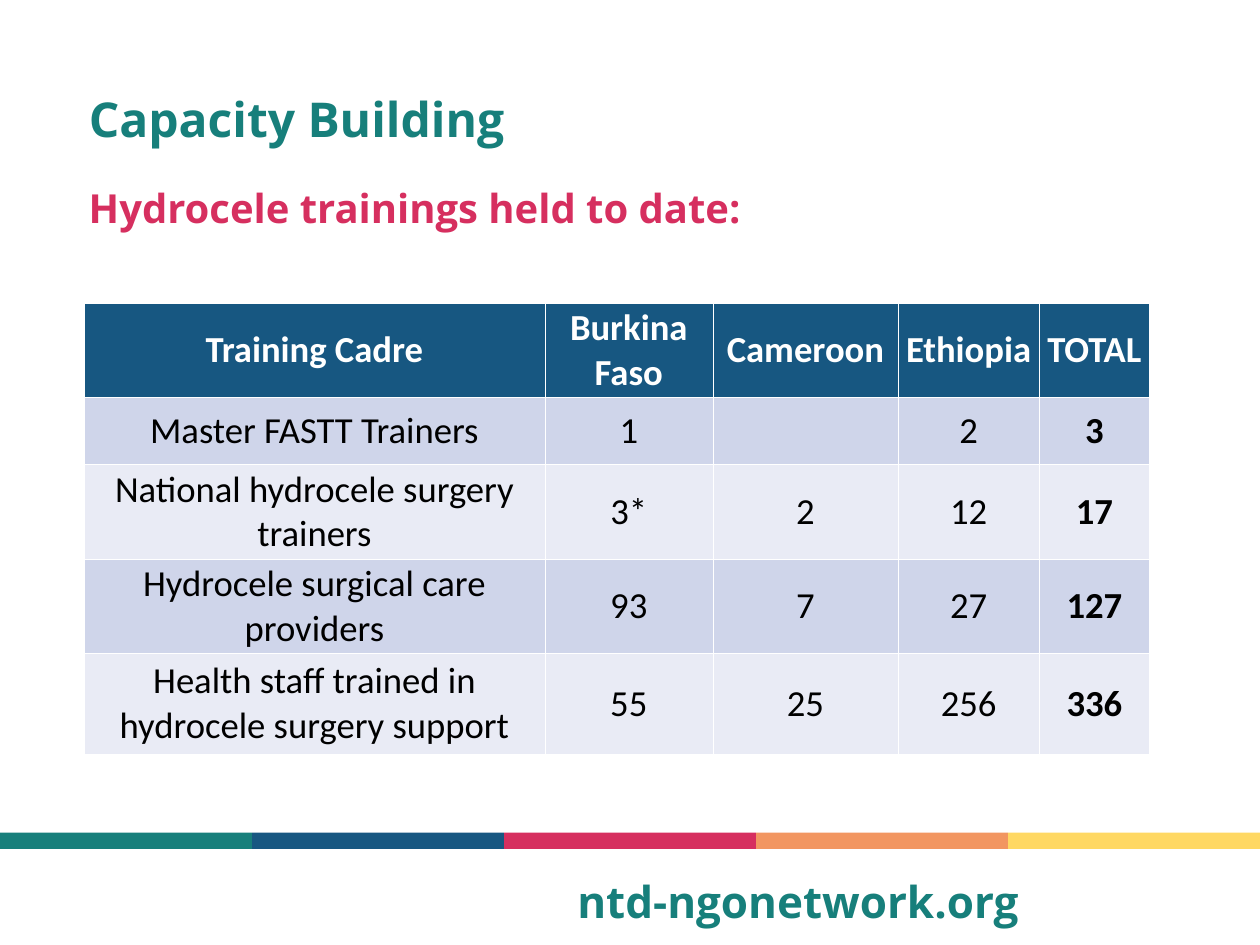
from lxml.etree import SubElement
from pptx import Presentation
from pptx.dml.color import RGBColor
from pptx.enum.shapes import MSO_SHAPE
from pptx.enum.text import MSO_ANCHOR as Anchor, MSO_AUTO_SIZE as AutoSize, PP_ALIGN as Align
from pptx.oxml.ns import qn
from pptx.util import Inches, Pt

TEAL = RGBColor(0x17, 0x7F, 0x7B)
BLUE = RGBColor(0x17, 0x57, 0x81)
PINK = RGBColor(0xD6, 0x2F, 0x5F)
ORANGE = RGBColor(0xF2, 0x96, 0x61)
YELLOW = RGBColor(0xFF, 0xD8, 0x63)
WHITE = RGBColor(0xFF, 0xFF, 0xFF)
BLACK = RGBColor(0, 0, 0)
BAND_DARK = RGBColor(0xCF, 0xD5, 0xEA)
BAND_LIGHT = RGBColor(0xE9, 0xEB, 0xF5)


def set_font(paragraph, **formats):
    color = formats.pop("color")
    for name, value in formats.items():
        setattr(paragraph.font, name, value)
    paragraph.font.color.rgb = color


def add_border(cell, side, width):
    line = SubElement(cell._tc.get_or_add_tcPr(), qn(f"a:{side}"), w=str(Pt(width)))
    fill = SubElement(line, qn("a:solidFill"))
    SubElement(fill, qn("a:srgbClr"), val=str(WHITE))


presentation = Presentation()
presentation.slide_width = Inches(26.25)
presentation.slide_height = Inches(19.69)
slide = presentation.slides.add_slide(presentation.slide_layouts[5])

# Colour strip
bar_width = 26.25 / 5
for index, color in enumerate([TEAL, BLUE, PINK, ORANGE, YELLOW]):
    bar = slide.shapes.add_shape(
        MSO_SHAPE.RECTANGLE, Inches(index * bar_width), Inches(17.35),
        Inches(bar_width), Inches(0.34))
    bar.shadow.inherit = False
    bar.fill.solid()
    bar.fill.fore_color.rgb = color
    bar.line.fill.background()

# Title, subtitle and web address
title = slide.shapes.title
subtitle = slide.shapes.add_textbox(0, 0, 0, 0)
address = slide.shapes.add_textbox(0, 0, 0, 0)
headings = [
    (title, "Capacity Building", (1.75, 2.01, 22.74, 1.76), 72, TEAL, Anchor.TOP),
    (subtitle, "Hydrocele trainings held to date:", (1.75, 3.94, 22.74, 1.41), 60, PINK, Anchor.TOP),
    (address, "ntd-ngonetwork.org", (11.93, 18, 11.3, 1.68), 66, TEAL, Anchor.MIDDLE),
]
for shape, text, box, size, color, anchor in headings:
    shape.left, shape.top, shape.width, shape.height = map(Inches, box)
    frame = shape.text_frame
    frame.text = text
    frame_formats = {
        "word_wrap": True, "auto_size": AutoSize.NONE, "vertical_anchor": anchor,
        "margin_left": Inches(0.1), "margin_right": Inches(0.1),
        "margin_top": 0, "margin_bottom": 0,
    }
    for name, value in frame_formats.items():
        setattr(frame, name, value)
    paragraph = frame.paragraphs[0]
    paragraph.alignment = Align.LEFT
    paragraph.line_spacing = 0.9
    paragraph.space_before = Pt(0)
    set_font(paragraph, name="Open Sans", size=Pt(size), bold=True, color=color)

# Training table
rows = [
    ["Training Cadre", "Burkina Faso", "Cameroon", "Ethiopia", "TOTAL"],
    ["Master FASTT Trainers", "1", "", "2", "3"],
    ["National hydrocele surgery trainers", "3*", "2", "12", "17"],
    ["Hydrocele surgical care providers", "93", "7", "27", "127"],
    ["Health staff trained in hydrocele surgery support", "55", "25", "256", "336"],
]
column_widths = [9.6, 3.5, 3.86, 2.94, 2.3]
row_heights = [1.4, 1.4, 1.4, 1.4, 2.1]
table = slide.shapes.add_table(
    len(rows), len(column_widths), Inches(1.75), Inches(6.32),
    Inches(sum(column_widths)), Inches(sum(row_heights))).table
for column, width in zip(table.columns, column_widths):
    column.width = Inches(width)
for row, height in zip(table.rows, row_heights):
    row.height = Inches(height)

for row_index, texts in enumerate(rows):
    is_header = row_index == 0
    band = BLUE if is_header else BAND_DARK if row_index % 2 else BAND_LIGHT
    for column_index, text in enumerate(texts):
        cell = table.cell(row_index, column_index)
        for side in ["lnL", "lnR", "lnT", "lnB"]:
            under_header = (row_index, side) in [(0, "lnB"), (1, "lnT")]
            add_border(cell, side, 3 if under_header else 1)
        cell.fill.solid()
        cell.fill.fore_color.rgb = band
        cell.vertical_anchor = Anchor.MIDDLE
        cell.text = text
        paragraph = cell.text_frame.paragraphs[0]
        paragraph.alignment = Align.CENTER
        set_font(paragraph, name="Calibri", size=Pt(55),
                 bold=is_header or column_index == len(texts) - 1,
                 color=WHITE if is_header else BLACK)

presentation.save("out.pptx")
